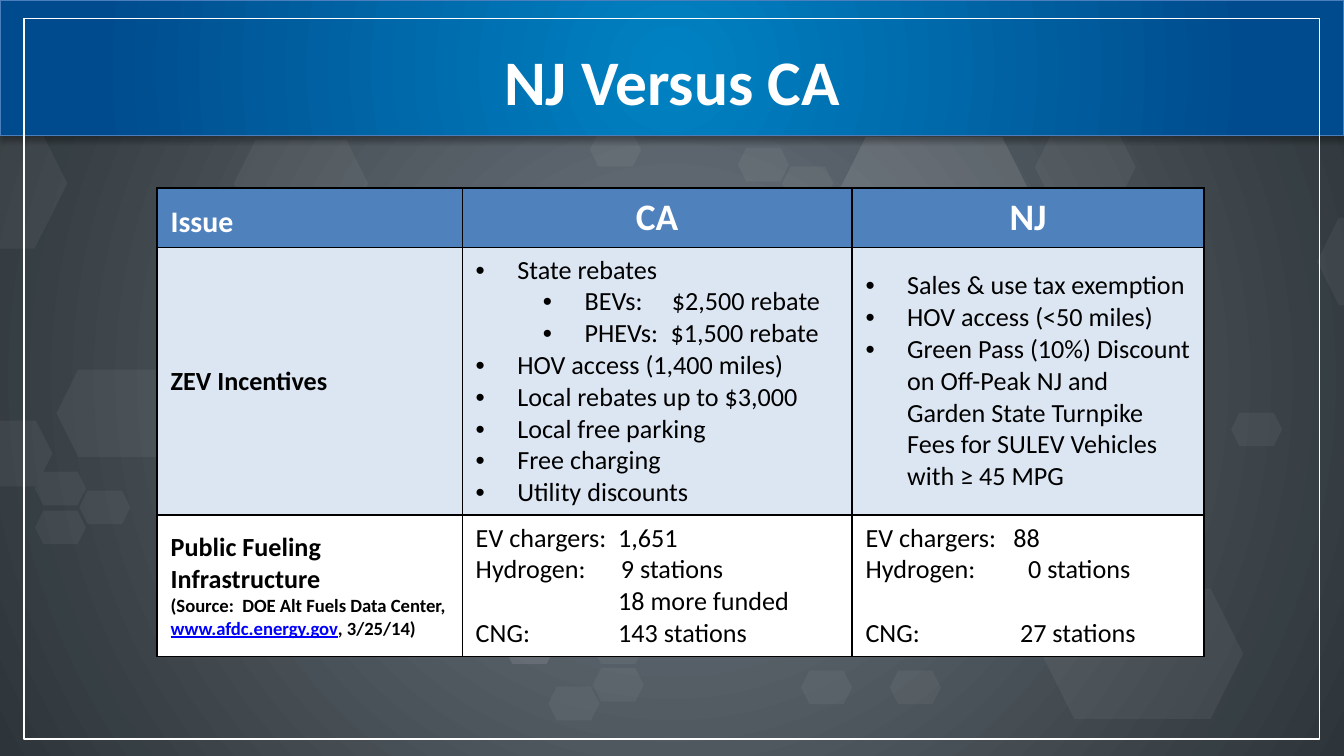
import pptx
import pptx.dml.color
import pptx.enum.shapes
import pptx.enum.text
import pptx.oxml
import pptx.oxml.ns
import pptx.util
from lxml import etree

Inches = pptx.util.Inches
Pt = pptx.util.Pt
qn = pptx.oxml.ns.qn
SHAPES = pptx.enum.shapes.MSO_SHAPE
ANCHOR = pptx.enum.text.MSO_ANCHOR
ALIGN = pptx.enum.text.PP_ALIGN

SLIDE_WIDTH = 10
SLIDE_HEIGHT = SLIDE_WIDTH * 9 / 16
FONT = "Calibri"
WHITE, BLACK, LINK = "FFFFFF", "000000", "0000FF"
HEADER_FILL, BAND_FILL = "4F81BD", "DCE6F2"

HEXAGON_SIZES = {"small": (0.38, 0.25), "medium": (0.75, 0.49), "large": (1, 0.65), "huge": (1.5, 0.97)}
HEXAGONS = [
    ("huge", 5, [(-1, 0.88), (7.75, 4.38)]),
    ("huge", 10, [(6.2, 1.02)]),
    ("large", 5, [(9.8, 1.62), (0.42, 2.75), (1.74, 1.04)]),
    ("medium", 5, [(-0.36, 3.13), (7.7, 1)]),
    ("small", 5, [(0.26, 3.51), (0.26, 3.8), (0.59, 3.65), (5.82, 1.24), (5.49, 1.1), (4.39, 0.99),
                  (9.16, 3.07), (4.41, 4.69), (4.08, 5.11), (4.41, 4.97), (5.96, 4.99), (6.62, 4.99)]),
    ("small", 10, [(3.75, 4.69)]),
]

TITLE = {"size": Pt(34), "bold": True, "color": WHITE}
HEADER = {"size": Pt(20), "bold": True, "color": WHITE}
ISSUE = {"size": Pt(16), "bold": True, "color": WHITE}
LABEL = {"size": Pt(14), "bold": True, "color": BLACK}
BODY = {"size": Pt(14), "bold": False, "color": BLACK}
SOURCE = {"size": Pt(10), "bold": True, "color": BLACK}
ADDRESS = {"size": Pt(10), "bold": True, "color": LINK, "underline": True}


def line(text, style=BODY, **layout):
    """Describe a paragraph made of one run."""
    return {"runs": [(text, style)], **layout}


def bullet(text, left=0.31, **layout):
    """Describe a bulleted paragraph."""
    return line(text, left=left, **layout)


COLUMN_WIDTHS = [2.27, 2.9, 2.62]
ROWS = [
    (0.44, HEADER_FILL, ANCHOR.BOTTOM, [
        [line("Issue", ISSUE)],
        [line("CA", HEADER, align=ALIGN.CENTER)],
        [line("NJ", HEADER, align=ALIGN.CENTER)],
    ]),
    (1.99, BAND_FILL, ANCHOR.MIDDLE, [
        [line("ZEV Incentives", LABEL)],
        [bullet("State rebates"),
         bullet("BEVs:\t$2,500 rebate", left=0.81, tab=1.46),
         bullet("PHEVs:\t$1,500 rebate", left=0.81, tab=1.45),
         bullet("HOV access (1,400 miles)"),
         bullet("Local rebates up to $3,000"),
         bullet("Local free parking"),
         bullet("Free charging"),
         bullet("Utility discounts")],
        [bullet("Sales & use tax exemption"),
         bullet("HOV access (<50 miles)"),
         bullet("Green Pass (10%) Discount on Off-Peak NJ and Garden State Turnpike Fees "
                "for SULEV Vehicles with ≥ 45 MPG")],
    ]),
    (1.05, WHITE, ANCHOR.MIDDLE, [
        [line("Public Fueling Infrastructure", LABEL),
         {"runs": [("(Source:  DOE Alt Fuels Data Center, ", SOURCE),
                   ("www.afdc.energy.gov", ADDRESS), (", 3/25/14)", SOURCE)]}],
        [line("EV chargers:\t1,651", tab=1.06),
         line("Hydrogen:\t9 stations", tab=1.08),
         line("\t18 more funded", tab=1.06),
         line("CNG:\t143 stations", tab=1.06)],
        [line("EV chargers:\t88", tab=1.1),
         line("Hydrogen:\t0 stations", tab=1.21),
         line("CNG:\t27 stations", tab=1.15, before=17)],
    ]),
]


def rgb(value):
    """Turn a hex string into a colour."""
    return pptx.dml.color.RGBColor.from_string(value)


def add_xml(parent, tag, **attributes):
    """Append a drawing element with attributes."""
    return etree.SubElement(parent, qn(tag), {name: str(value) for name, value in attributes.items()})


def radial_fill(fill, element, stops):
    """Fill an object with a circular gradient."""
    fill.gradient()
    for stop, (position, color) in zip(fill.gradient_stops, stops):
        stop.position = position
        stop.color.rgb = rgb(color)
    gradient = next(element.iter(qn("a:gradFill")))
    for linear in gradient.findall(qn("a:lin")):
        gradient.remove(linear)
    circle = add_xml(gradient, "a:path", path="circle")
    add_xml(circle, "a:fillToRect", l=50000, t=50000, r=50000, b=50000)


def add_preset(slide, preset, left, top, width, height):
    """Add a preset shape without a shadow."""
    shape = slide.shapes.add_shape(preset, Inches(left), Inches(top), Inches(width), Inches(height))
    shape.shadow.inherit = False
    return shape


def add_hexagons(slide):
    """Scatter translucent hexagons over the background."""
    for size, opacity, positions in HEXAGONS:
        for left, top in positions:
            shape = add_preset(slide, SHAPES.HEXAGON, left, top, *HEXAGON_SIZES[size])
            shape.fill.solid()
            shape.fill.fore_color.rgb = rgb(WHITE)
            color = next(shape.element.spPr.iter(qn("a:srgbClr")))
            add_xml(color, "a:alpha", val=opacity * 1000)
            shape.line.fill.background()


def add_frame(slide):
    """Add the title banner and the outline around the slide."""
    banner = add_preset(slide, SHAPES.RECTANGLE, 0, 0, SLIDE_WIDTH, 1.01)
    radial_fill(banner.fill, banner.element.spPr, [(0, "0082C2"), (0.86, "004B8D")])
    effects = banner.element.spPr.find(qn("a:effectLst"))
    shadow = add_xml(effects, "a:outerShdw", blurRad=Pt(3.1), dist=Pt(1.8), dir=5400000, rotWithShape=0)
    add_xml(add_xml(shadow, "a:srgbClr", val=BLACK), "a:alpha", val=35000)
    outline = add_preset(slide, SHAPES.RECTANGLE, 0.18, 0.14, 9.64, 5.36)
    outline.fill.background()
    for shape, color in ((banner, "4B7EBC"), (outline, WHITE)):
        shape.line.color.rgb = rgb(color)
        shape.line.width = Pt(0.75)


def write_paragraph(paragraph, content):
    """Write a paragraph with its indents, tabs and runs."""
    paragraph.alignment = content.get("align", ALIGN.LEFT)
    if "before" in content:
        paragraph.space_before = Pt(content["before"])
    properties = paragraph._p.get_or_add_pPr()
    if "left" in content:
        paragraph.level = int(content["left"] > 0.31)
        properties.set("marL", str(Inches(content["left"])))
        properties.set("indent", str(Inches(-0.31)))
        add_xml(properties, "a:buFont", typeface="Arial")
        add_xml(properties, "a:buChar", char="•")
    if "tab" in content:
        add_xml(add_xml(properties, "a:tabLst"), "a:tab", pos=Inches(content["tab"]), algn="l")
    for text, style in content["runs"]:
        run = paragraph.add_run()
        run.text = text
        run.font.name = FONT
        for name, value in style.items():
            if name == "color":
                run.font.color.rgb = rgb(value)
            else:
                setattr(run.font, name, value)


def add_title(slide):
    """Place the title in front of the banner."""
    title = slide.shapes.title
    title.element.getparent().append(title.element)
    box = {"left": 0.5, "top": 0.23, "width": 9, "height": 0.73}
    for name, value in box.items():
        setattr(title, name, Inches(value))
    title.text_frame.vertical_anchor = ANCHOR.MIDDLE
    write_paragraph(title.text_frame.paragraphs[0], line("NJ Versus CA", TITLE, align=ALIGN.CENTER))


def fill_cell(cell, contents, color, anchor):
    """Give a cell its borders, fill and paragraphs."""
    properties = cell._tc.get_or_add_tcPr()
    for side in ("a:lnL", "a:lnR", "a:lnT", "a:lnB"):
        border = add_xml(properties, side, w=Pt(1))
        add_xml(add_xml(border, "a:solidFill"), "a:srgbClr", val=BLACK)
    cell.fill.solid()
    cell.fill.fore_color.rgb = rgb(color)
    cell.vertical_anchor = anchor
    frame = cell.text_frame
    for index, content in enumerate(contents):
        write_paragraph(frame.add_paragraph() if index else frame.paragraphs[0], content)


def add_comparison(slide):
    """Add the table comparing the two states."""
    height = sum(row[0] for row in ROWS)
    table = slide.shapes.add_table(len(ROWS), len(COLUMN_WIDTHS), Inches(1.17), Inches(1.4),
                                   Inches(sum(COLUMN_WIDTHS)), Inches(height)).table
    for column, width in zip(table.columns, COLUMN_WIDTHS):
        column.width = Inches(width)
    for row, (height, color, anchor, cells) in zip(table.rows, ROWS):
        row.height = Inches(height)
        for cell, contents in zip(row.cells, cells):
            fill_cell(cell, contents, color, anchor)


def main():
    """Build and save the slide."""
    presentation = pptx.Presentation()
    presentation.slide_width, presentation.slide_height = Inches(SLIDE_WIDTH), Inches(SLIDE_HEIGHT)
    slide = presentation.slides.add_slide(presentation.slide_layouts[5])
    radial_fill(slide.background.fill, slide.element, [(0, "6F7881"), (1, "2D353A")])
    add_hexagons(slide)
    add_frame(slide)
    add_title(slide)
    add_comparison(slide)
    presentation.save("out.pptx")


if __name__ == "__main__":
    main()
